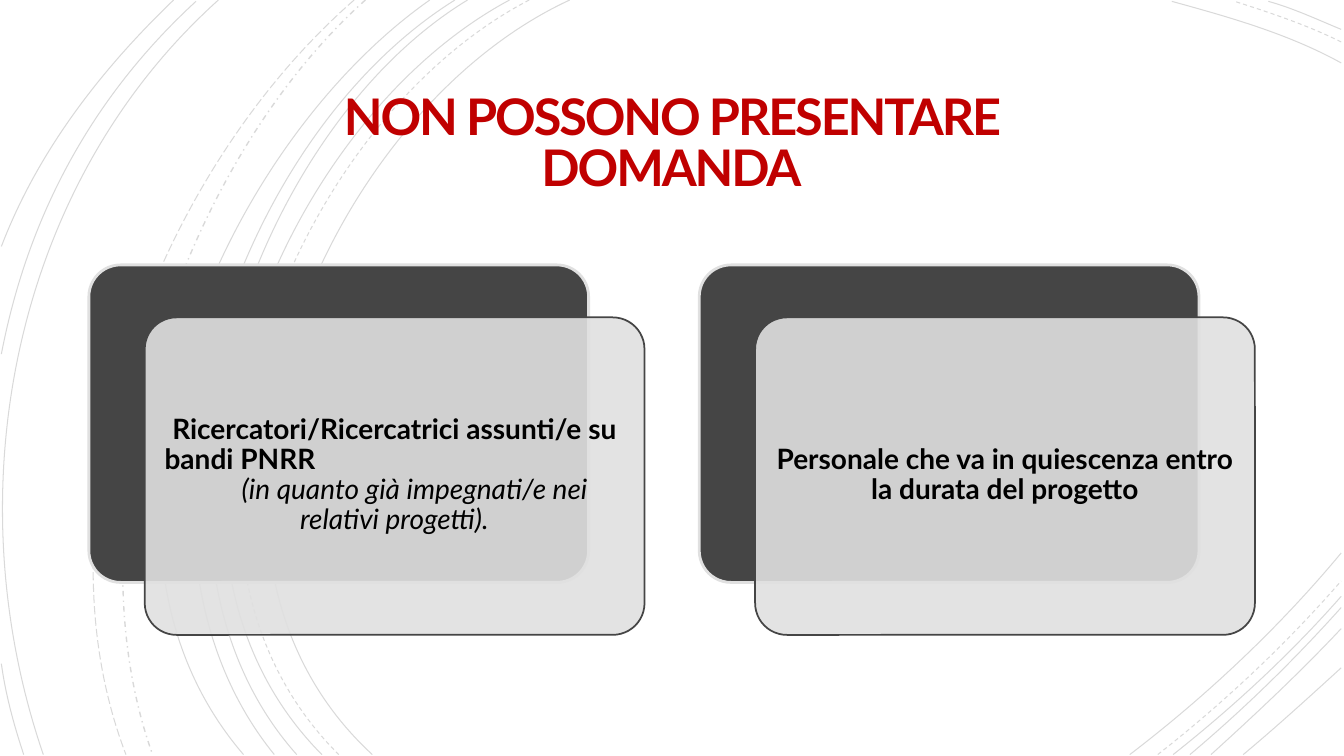
from lxml.etree import SubElement as Sub
from pptx import Presentation
from pptx.dml.color import RGBColor
from pptx.enum.dml import MSO_LINE as Dash
from pptx.enum.shapes import MSO_SHAPE as Kind
from pptx.enum.text import MSO_ANCHOR as Anchor, PP_ALIGN as Align
from pptx.oxml.ns import qn
from pptx.util import Pt

CURVES = [
    ((407, 0), (227, 83), (103, 389), (266, 539)),
    ((958, 45), (920, 24), (877, 12), (837, 1)),
    ((807, 539), (862, 497), (914, 448), (958, 395)),
    ((378, 0), (205, 90), (89, 387), (242, 539), Dash.DASH),
    ((958, 30), (934, 18), (907, 9), (882, 1), Dash.DASH),
    ((827, 539), (873, 503), (918, 461), (958, 415), Dash.DASH),
    ((364, 0), (194, 91), (79, 387), (230, 539)),
    ((958, 21), (941, 14), (924, 6), (906, 1)),
    ((838, 539), (881, 505), (922, 467), (958, 426)),
    ((334, 0), (176, 96), (79, 390), (212, 539)),
    ((850, 539), (888, 507), (924, 472), (958, 434)),
    ((325, 0), (166, 99), (70, 384), (196, 539)),
    ((865, 539), (897, 510), (929, 480), (958, 449)),
    ((307, 0), (156, 106), (38, 381), (174, 539)),
    ((888, 539), (912, 519), (935, 498), (958, 477)),
    ((261, 0), (127, 120), (47, 366), (109, 539), Dash.DASH_DOT, 1),
    ((253, 0), (113, 122), (21, 359), (90, 539), Dash.LONG_DASH),
    ((156, 0), (8, 133), (-33, 353), (31, 539)),
    ((140, 1), (66, 69), (20, 154), (1, 253)),
    ((1, 474), (4, 496), (10, 518), (17, 539)),
    ((124, 0), (72, 50), (27, 108), (1, 176)),
]

CARDS = [
    [("Ricercatori/Ricercatrici assunti/e su", Align.CENTER, False, 0),
     ("bandi PNRR", Align.LEFT, False, 1.5),
     ("(in quanto già impegnati/e nei relativi progetti).",
      Align.CENTER, True, 29)],
    [("Personale che va in quiescenza entro la durata del progetto",
      Align.CENTER, False, 0)],
]


def color(code):
    return RGBColor.from_string(code)


def fade(fill, pct):
    tint = fill._xPr.find(qn("a:solidFill"))[0]
    Sub(tint, qn("a:alpha"), val=str(pct * 1000))


class Deck:
    """Draws the elements of one slide in a shared style."""

    font = "Lato"
    dark = "454545"
    pale = "E0E0E0"
    red = "C00000"
    black = "000000"
    white = "FFFFFF"

    def __init__(self):
        self.show = Presentation()
        self.show.slide_width = Pt(960)
        self.show.slide_height = Pt(540)
        self.slide = self.show.slides.add_slide(self.show.slide_layouts[6])
        self.shapes = self.slide.shapes

    def shape(self, kind, left, top, width, height, fill):
        box = self.shapes.add_shape(kind, Pt(left), Pt(top),
                                    Pt(width), Pt(height))
        box.shadow.inherit = False
        box.fill.solid()
        box.fill.fore_color.rgb = color(fill)
        box.line.fill.background()
        return box

    def cover(self):
        self.shape(Kind.RECTANGLE, 0, 0, 960, 540, self.white)

    def curve(self, start, one, two, end, dash=Dash.SOLID, width=0.75):
        dots = [(Pt(x), Pt(y)) for x, y in (start, one, two, end)]
        pen = self.shapes.build_freeform(*dots[0])
        pen.add_line_segments(dots[1:], close=False)
        arc = pen.convert_to_shape()
        track = arc._element.find(".//" + qn("a:path"))
        bend = Sub(track, qn("a:cubicBezTo"))
        for leg in track.findall(qn("a:lnTo")):
            bend.append(leg[0])
            track.remove(leg)
        arc.shadow.inherit = False
        arc.fill.background()
        self.edge(arc, self.black, width)
        arc.line.dash_style = dash
        fade(arc.line.fill, 15)

    def edge(self, shape, code, width):
        shape.line.color.rgb = color(code)
        shape.line.width = Pt(width)

    def panel(self, left, top, fill, line, width):
        box = self.shape(Kind.ROUNDED_RECTANGLE, left, top, 357, 226.8, fill)
        box.adjustments[0] = 0.1
        self.edge(box, line, width)
        return box

    def label(self, left, top, width, height, inset, words):
        box = self.shapes.add_textbox(Pt(left), Pt(top), Pt(width), Pt(height))
        text = box.text_frame
        text.word_wrap = True
        text.vertical_anchor = Anchor.MIDDLE
        text.margin_left = text.margin_right = Pt(inset)
        text.margin_top = text.margin_bottom = Pt(inset)
        text.text = words
        return text.paragraphs

    def style(self, para, size, code, align, gap, slant=False):
        para.alignment = align
        para.line_spacing = gap
        for run in para.runs:
            run.font.name = self.font
            run.font.size = Pt(size)
            run.font.bold = not slant
            run.font.italic = slant
            run.font.color.rgb = color(code)

    def title(self, words):
        para = self.label(138, 62.6, 683.3, 82.8, 18, words)[0]
        self.style(para, 36, self.red, Align.CENTER, 0.85)
        para.runs[0].font._element.set("spc", "-150")

    def card(self, left, top, rows):
        self.panel(left, top, self.dark, self.pale, 2)
        front = self.panel(left + 39.9, top + 37.5, self.pale, self.dark, 1.25)
        fade(front.fill, 90)
        words = "\n".join(row[0] for row in rows)
        paras = self.label(left + 46.6, top + 43.8, 343.4, 213.1, 6, words)
        for para, (_, align, slant, indent) in zip(paras, rows):
            self.style(para, 20, self.black, align, 0.9, slant)
            if indent:
                para._p.get_or_add_pPr().set("indent", str(Pt(indent)))

    def save(self):
        self.show.save("out.pptx")


def main():
    deck = Deck()
    deck.cover()
    for curve in CURVES:
        deck.curve(*curve)
    deck.title("NON POSSONO PRESENTARE DOMANDA")
    for spot, rows in enumerate(CARDS):
        deck.card(63.5 + 436 * spot, 189.2, rows)
    deck.save()


if __name__ == "__main__":
    main()
